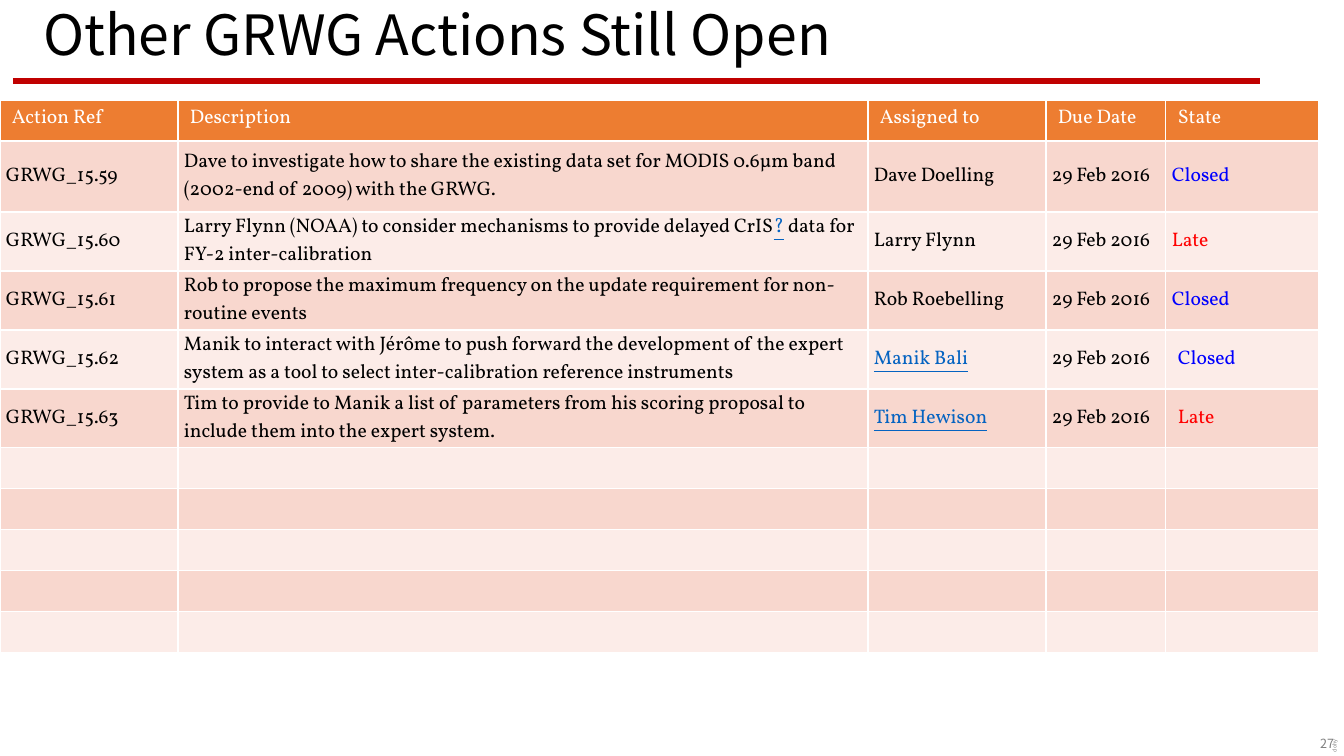
from lxml import etree
from pptx import Presentation
from pptx.dml.color import RGBColor
from pptx.enum.shapes import MSO_CONNECTOR
from pptx.enum.text import MSO_ANCHOR, PP_ALIGN
from pptx.oxml.ns import qn
from pptx.util import Pt

LINE = MSO_CONNECTOR.STRAIGHT
TOP, MIDDLE = MSO_ANCHOR.TOP, MSO_ANCHOR.MIDDLE
LEFT, RIGHT = PP_ALIGN.LEFT, PP_ALIGN.RIGHT
SANS, SERIF = "Noto Sans CJK KR", "Vollkorn"
BLACK, WHITE, GREY, RED = "000000", "FFFFFF", "808080", "C00000"
LINK = "0563C1"
ORANGE, BANDS = "ED7D31", ("F8D7CE", "FCECE8")

# Content: a cell is a list of (text, colour) runs
TITLE = "Other GRWG Actions Still Open"
HEADS = ["Action Ref", "Description", "Assigned to", "Due Date", "State"]
DUE = "29 Feb 2016"
STATES = {"Closed": "0000FF", "Late": "FF0000"}
ACTIONS = [
    ("GRWG_15.59",
     [("Dave to investigate how to share the existing data set for MODIS "
       "0.6µm band (2002-end of 2009) with the GRWG.", BLACK)],
     ("Dave Doelling", BLACK), "Closed"),
    ("GRWG_15.60",
     [("Larry Flynn (NOAA) to consider mechanisms to provide delayed CrIS",
       BLACK), ("?", LINK), (" data for FY-2 inter-calibration", BLACK)],
     ("Larry Flynn", BLACK), "Late"),
    ("GRWG_15.61",
     [("Rob to propose the maximum frequency on the update requirement for "
       "non-routine events", BLACK)],
     ("Rob Roebelling", BLACK), "Closed"),
    ("GRWG_15.62",
     [("Manik to interact with Jérôme to push forward the development of the "
       "expert system as a tool to select inter-calibration reference "
       "instruments", BLACK)],
     ("Manik Bali", LINK), "Closed"),
    ("GRWG_15.63",
     [("Tim to provide to Manik a list of parameters from his scoring "
       "proposal to include them into the expert system.", BLACK)],
     ("Tim Hewison", LINK), "Late"),
]
SPARE = 5
WIDE_FROM = 4  # state cells from this row on have wide margins

# Layout in px
COLS = [178, 690, 178, 120, 153]
ROWS = [41, 71] + [59] * 4 + [41] * SPARE
WIDE, SLIM = (12, 5), (6, 2)


def px(n):
    return round(n * 914400 / 100.8)


def rgb(code):
    return RGBColor.from_string(code)


def add_run(para, text, size, face, color):
    run = para.add_run()
    run.text = text
    font = run.font
    font.size, font.name = Pt(size), face
    font.color.rgb = rgb(color)
    if color == LINK:
        font.underline = True


def set_pad(item, pad):
    item.margin_left = item.margin_right = px(pad[0])
    item.margin_top = item.margin_bottom = px(pad[1])


def add_text(box, text, size, color, pad, anchor=TOP, align=LEFT):
    shape = slide.shapes.add_textbox(*map(px, box))
    frame = shape.text_frame
    frame.word_wrap = True
    frame.vertical_anchor = anchor
    set_pad(frame, pad)
    para = frame.paragraphs[0]
    para.alignment = align
    add_run(para, text, size, SANS, color)
    return shape


def add_edges(cell):
    props = cell._tc.get_or_add_tcPr()
    for side in ("lnL", "lnR", "lnT", "lnB"):
        edge = etree.SubElement(props, qn("a:" + side), w=str(Pt(1)))
        fill = etree.SubElement(edge, qn("a:solidFill"))
        etree.SubElement(fill, qn("a:srgbClr"), val=WHITE)


def fill_cell(cell, runs, color, pad, anchor):
    add_edges(cell)
    cell.fill.solid()
    cell.fill.fore_color.rgb = rgb(color)
    cell.vertical_anchor = anchor
    set_pad(cell, pad)
    for text, ink in runs:
        add_run(cell.text_frame.paragraphs[0], text, 14, SERIF, ink)


deck = Presentation()
deck.slide_width, deck.slide_height = px(1344), px(756)
slide = deck.slides.add_slide(deck.slide_layouts[6])

# Rule, page number and side mark
rule = slide.shapes.add_connector(LINE, px(13), px(81), px(1260), px(81))
rule.line.color.rgb = rgb(RED)
rule.line.width = Pt(4.5)
etree.SubElement(rule._element.spPr, qn("a:effectLst"))
add_text((1229, 734, 115, 22), "27", 9, GREY, (10, 2), align=RIGHT)
mark = add_text((1310, 718, 52, 16), "dohy", 3.8, GREY, (0, 4))
mark.rotation = 270

# Title
title = add_text((33, 8, 1159, 60), TITLE, 39.6, BLACK, (10, 5), MIDDLE)
title.text_frame.paragraphs[0].line_spacing = 0.9

# Table of actions
table = slide.shapes.add_table(len(ROWS), len(COLS), 0, px(100),
                               px(sum(COLS)), px(sum(ROWS))).table
table.first_row = table.horz_banding = False
for col, width in zip(table.columns, COLS):
    col.width = px(width)
for row, height in zip(table.rows, ROWS):
    row.height = px(height)

for c, head in enumerate(HEADS):
    fill_cell(table.cell(0, c), [(head, WHITE)], ORANGE, WIDE, TOP)

body = [[[(ref, BLACK)], task, [owner], [(DUE, BLACK)],
         [(state, STATES[state])]] for ref, task, owner, state in ACTIONS]
body += [[[]] * len(COLS)] * SPARE
for r, cells in enumerate(body, 1):
    for c, runs in enumerate(cells):
        pad = WIDE if c == 4 and r >= WIDE_FROM else SLIM
        fill_cell(table.cell(r, c), runs, BANDS[(r - 1) % 2], pad, MIDDLE)

deck.save("out.pptx")
